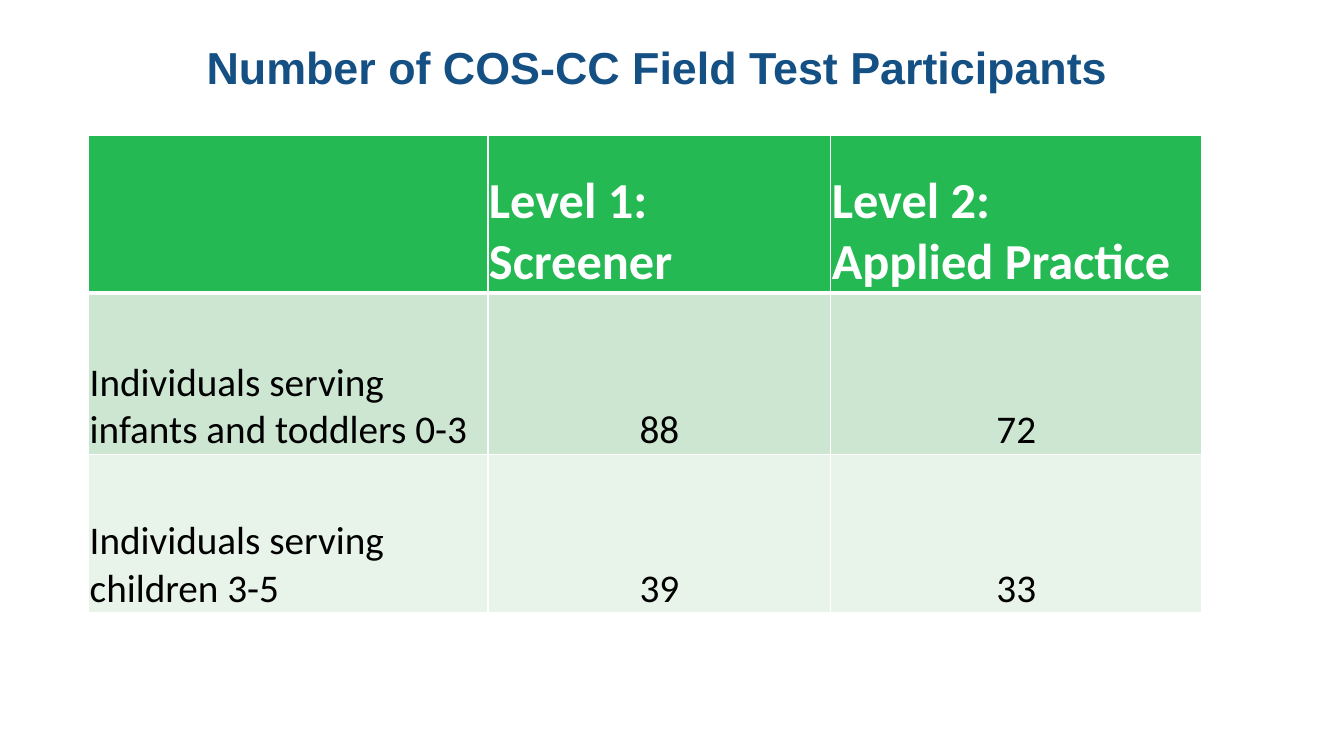
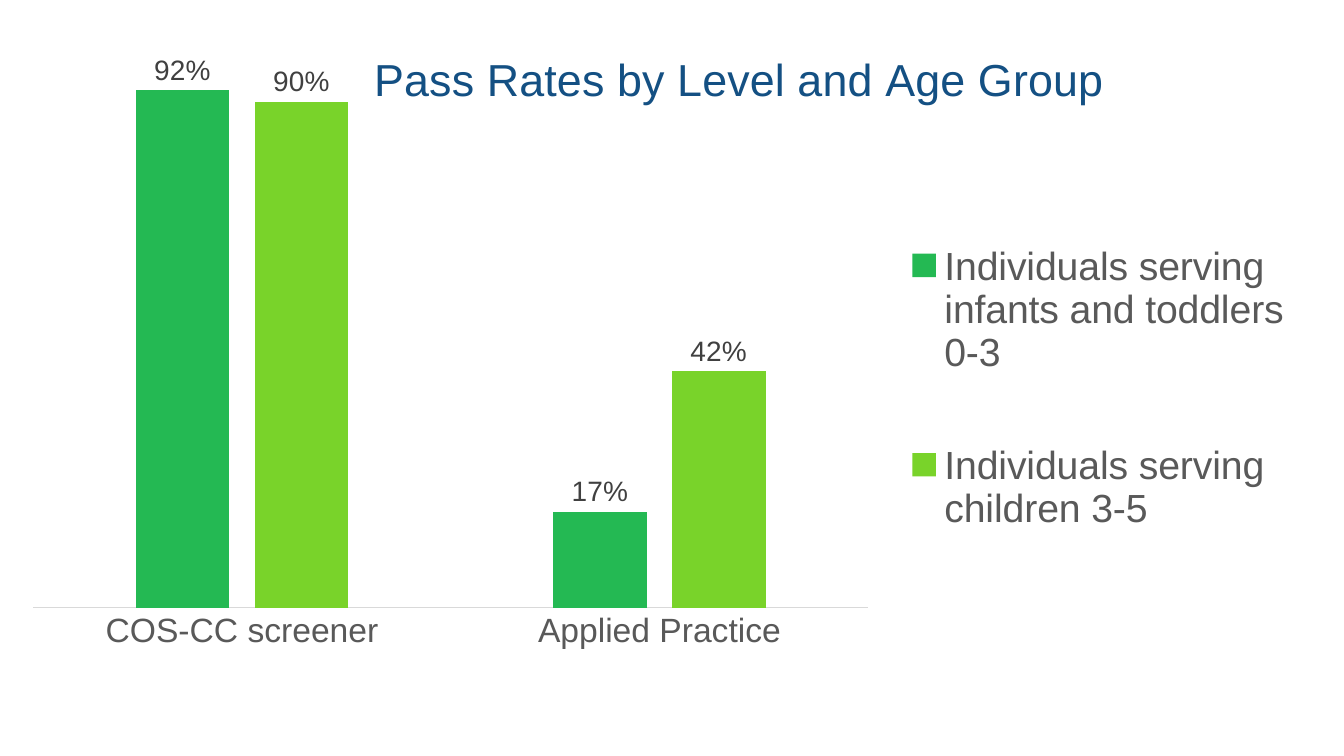
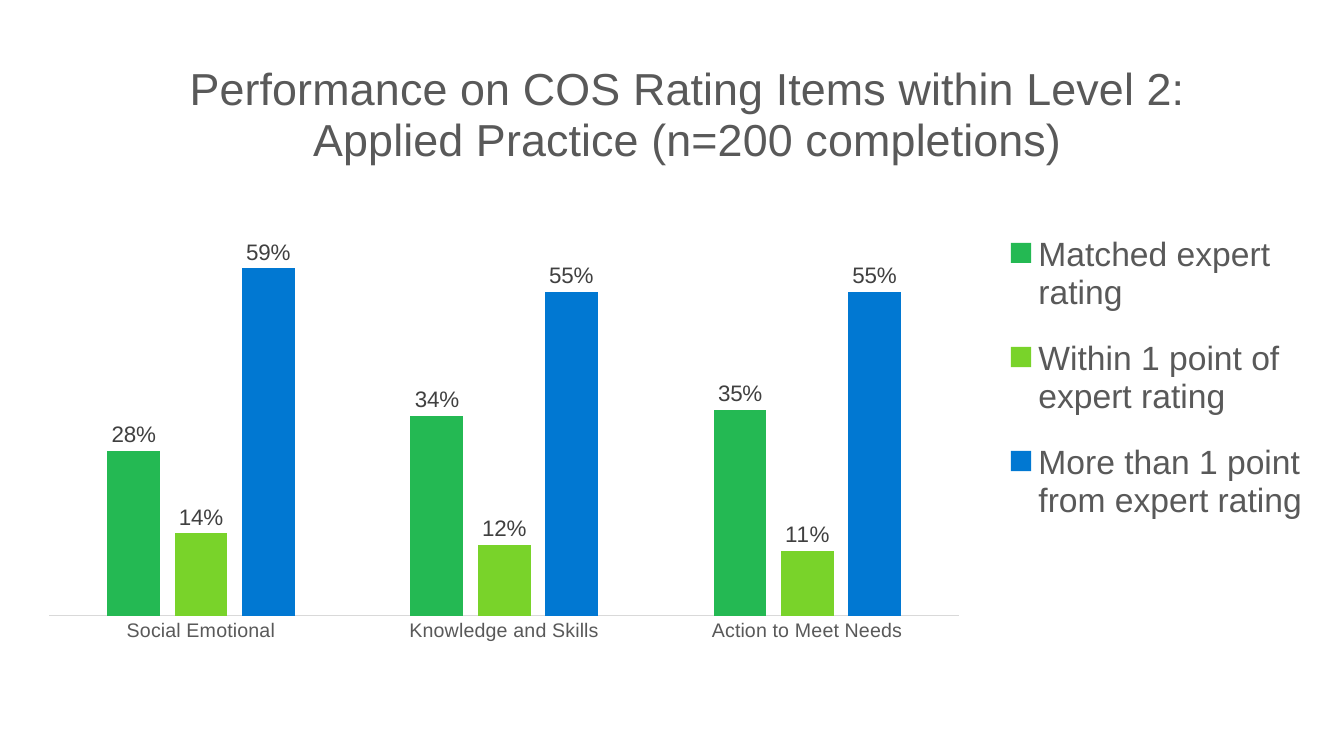
from lxml import etree
from pptx import Presentation
from pptx import util as u
from pptx.chart.data import CategoryChartData
from pptx.dml.color import RGBColor
from pptx.enum import chart as chart_enum
from pptx.enum import text
from pptx.oxml.ns import qn

PX = 9144  # 100 px to the inch
NAVY, GRAY, LABEL_GRAY, AXIS_GRAY = "145083", "595959", "404040", "D9D9D9"
GREEN, LIME, BLUE = "24B953", "79D32A", "0178D2"
WHITE, BLACK = "FFFFFF", "000000"
ROW_FILLS = [GREEN, "CDE6D1", "E8F3E9"]
SERIES_COLORS = [GREEN, LIME, BLUE]
TITLE_SIZE = 32
TODDLERS = "Individuals serving infants and toddlers 0-3"
CHILDREN = "Individuals serving children 3-5"


def px(*lengths):
    return [u.Emu(length * PX) for length in lengths]


def rgb(color):
    return RGBColor.from_string(color)


def style_font(font, size, color, name="Arial", bold=False):
    font.size = u.Pt(size)
    font.name = name
    font.bold = bold
    font.color.rgb = rgb(color)


def add_title(slide, box, wording):
    title = slide.shapes.title
    title.left, title.top, title.width, title.height = px(*box)
    frame = title.text_frame
    frame.text = wording
    frame.vertical_anchor = text.MSO_ANCHOR.TOP
    paragraph = frame.paragraphs[0]
    paragraph.alignment = text.PP_ALIGN.CENTER
    paragraph.line_spacing = 0.9
    style_font(paragraph.font, TITLE_SIZE, NAVY, bold=True)


def add_borders(cell, widths):
    """Draw white borders; widths maps L, R, T and B to points."""
    properties = cell._tc.get_or_add_tcPr()
    for side in "LRTB":
        line = etree.SubElement(properties, qn(f"a:ln{side}"), w=str(u.Pt(widths[side])))
        fill = etree.SubElement(line, qn("a:solidFill"))
        etree.SubElement(fill, qn("a:srgbClr"), val=WHITE)


def fill_cell(cell, row, column, wording):
    header = row == 0
    add_borders(cell, {"L": 1, "R": 1, "T": 3 if row == 1 else 1, "B": 3 if header else 1})
    cell.fill.solid()
    cell.fill.fore_color.rgb = rgb(ROW_FILLS[row])
    cell.margin_left, cell.margin_top, cell.margin_right, cell.margin_bottom = px(1, 1, 1, 0)
    cell.vertical_anchor = text.MSO_ANCHOR.BOTTOM
    cell.text = wording
    for paragraph in cell.text_frame.paragraphs:
        if column and not header:
            paragraph.alignment = text.PP_ALIGN.CENTER
        style_font(paragraph.font, 36 if header else 28, WHITE if header else BLACK, "Calibri", header)


def add_table(slide, left, top, widths, heights, rows):
    frame = slide.shapes.add_table(
        len(heights), len(widths), *px(left, top, sum(widths), sum(heights)))
    table = frame.table
    for column, width in zip(table.columns, px(*widths)):
        column.width = width
    for row, height in zip(table.rows, px(*heights)):
        row.height = height
    for row, wordings in enumerate(rows):
        for column, wording in enumerate(wordings):
            fill_cell(table.cell(row, column), row, column, wording)


def set_layout(element, chart_box, part, after=None, inner=False):
    """Fix a chart part at px offsets within the chart; after names the tag it follows."""
    for old in element.findall(qn("c:layout")):
        element.remove(old)
    layout = etree.Element(qn("c:layout"))
    manual = etree.SubElement(layout, qn("c:manualLayout"))
    if inner:
        etree.SubElement(manual, qn("c:layoutTarget"), val="inner")
    for mode in ("xMode", "yMode"):
        etree.SubElement(manual, qn(f"c:{mode}"), val="edge")
    for tag, length, whole in zip("xywh", part, chart_box[2:] * 2):
        etree.SubElement(manual, qn(f"c:{tag}"), val=str(round(length / whole, 4)))
    if after:
        element.find(qn(after)).addnext(layout)
    else:
        element.insert(0, layout)


def style_axes(chart, category_size):
    category_axis, value_axis = chart.category_axis, chart.value_axis
    category_axis.major_tick_mark = chart_enum.XL_TICK_MARK.NONE
    category_axis.format.line.color.rgb = rgb(AXIS_GRAY)
    category_axis.format.line.width = u.Pt(0.75)
    style_font(category_axis.tick_labels.font, category_size, GRAY)
    value_axis.visible = False
    value_axis.has_major_gridlines = False
    value_axis.minimum_scale, value_axis.maximum_scale = 0, 1


def style_series(plot, label_size):
    plot.vary_by_categories = False
    plot.gap_width, plot.overlap = 219, -27
    for series, color in zip(plot.series, SERIES_COLORS):
        series.format.fill.solid()
        series.format.fill.fore_color.rgb = rgb(color)
        labels = series.data_labels
        labels.show_value = True
        labels.number_format, labels.number_format_is_linked = "0%", False
        labels.position = chart_enum.XL_LABEL_POSITION.OUTSIDE_END
        style_font(labels.font, label_size, LABEL_GRAY)


def add_column_chart(slide, box, title, title_color, categories, series, sizes, parts):
    """sizes: category, label and legend text; parts: title, plot and legend offsets."""
    data = CategoryChartData(number_format="0%")
    data.categories = categories
    for name, values in series.items():
        data.add_series(name, values)
    chart = slide.shapes.add_chart(
        chart_enum.XL_CHART_TYPE.COLUMN_CLUSTERED, *px(*box), data).chart
    category_size, label_size, legend_size = sizes
    title_part, plot_part, legend_part = parts
    style_font(chart.font, 10, BLACK)
    style_axes(chart, category_size)
    style_series(chart.plots[0], label_size)

    chart.has_title = True
    title_frame = chart.chart_title.text_frame
    title_frame.text = title
    style_font(title_frame.paragraphs[0].font, TITLE_SIZE, title_color)
    chart.has_legend = True
    chart.legend.position = chart_enum.XL_LEGEND_POSITION.RIGHT
    chart.legend.include_in_layout = False
    style_font(chart.legend.font, legend_size, GRAY)

    chart_element = chart._chartSpace.find(qn("c:chart"))
    set_layout(chart_element.find(qn("c:title")), box, title_part, after="c:tx")
    set_layout(chart_element.find(qn("c:plotArea")), box, plot_part, inner=True)
    set_layout(chart_element.find(qn("c:legend")), box, legend_part, after="c:legendPos")


def main():
    presentation = Presentation()
    presentation.slide_width, presentation.slide_height = px(1333, 750)
    title_only, blank = presentation.slide_layouts[5], presentation.slide_layouts[6]

    participants = presentation.slides.add_slide(title_only)
    add_title(participants, (77, 40, 1150, 145), "Number of COS-CC Field Test Participants")
    add_table(participants, 88, 134, [396, 340, 368], [157, 160, 157], [
        ["", "Level 1:\nScreener", "Level 2:\nApplied Practice"],
        [TODDLERS, "88", "72"],
        [CHILDREN, "39", "33"],
    ])

    add_column_chart(
        presentation.slides.add_slide(blank), (7, -49, 1282, 708),
        "Pass Rates by Level and Age Group", NAVY,
        ["COS-CC screener", "Applied Practice"],
        {TODDLERS: [0.92, 0.17], CHILDREN: [0.9, 0.42]},
        sizes=(24, 20, 28),
        parts=[(356, 91), (26, 94, 828, 558), (886, 223, 392, 423)])

    add_column_chart(
        presentation.slides.add_slide(blank), (28, 16, 1291, 717),
        "Performance on COS Rating Items within Level 2: Applied Practice (n=200 completions)", GRAY,
        ["Social Emotional", "Knowledge and Skills", "Action to Meet Needs"],
        {"Matched expert rating": [0.28, 0.34, 0.35],
         "Within 1 point of expert rating": [0.14, 0.12, 0.11],
         "More than 1 point from expert rating": [0.59, 0.55, 0.55]},
        sizes=(14, 16, 24),
        parts=[(152, 35), (21, 11, 902, 584), (954, 190, 330, 338)])

    presentation.save("out.pptx")


if __name__ == "__main__":
    main()
